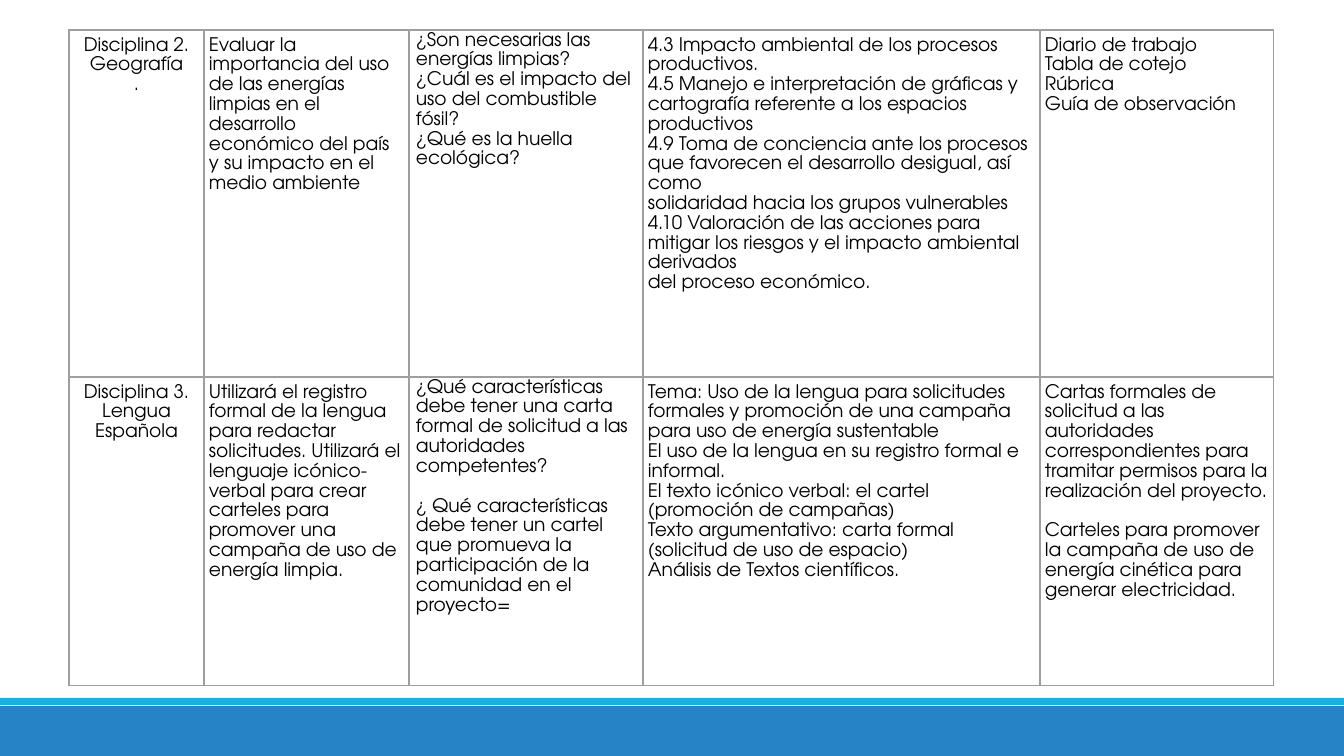
from lxml import etree
from pptx import Presentation
from pptx import util as u
from pptx.dml.color import RGBColor
from pptx.enum import shapes, text
from pptx.oxml.ns import qn

PX = 914400 / 134.4
THEME = {
    "font": "TeX Gyre Adventor", "size": 10, "leading": 1.15,
    "ink": "000000", "paper": "FFFFFF", "rule": "9E9E9E", "width": 0.75,
    "band": "2683C6", "strip": "1CADE4",
}


def px(n):
    return u.Emu(round(n * PX))


def edge(cell):
    """Draw the four borders of a cell."""
    props = cell._tc.get_or_add_tcPr()
    for side in ("lnL", "lnR", "lnT", "lnB"):
        line = etree.SubElement(props, qn("a:" + side), w=str(u.Pt(THEME["width"])))
        fill = etree.SubElement(line, qn("a:solidFill"))
        etree.SubElement(fill, qn("a:srgbClr"), val=THEME["rule"])


# One line is one paragraph; an empty line asks for a gap above the next one.
ROWS = [
    [
        "Disciplina 2.\nGeografía\n.",
        "Evaluar la importancia del uso de las energías limpias en el desarrollo "
        "económico del país y su impacto en el medio ambiente",
        "¿Son necesarias las energías limpias?\n"
        "¿Cuál es el impacto del uso del combustible fósil?\n"
        "¿Qué es la huella ecológica?",
        "4.3 Impacto ambiental de los procesos productivos.\n"
        "4.5 Manejo e interpretación de gráficas y cartografía referente a los "
        "espacios productivos\n"
        "4.9 Toma de conciencia ante los procesos que favorecen el desarrollo "
        "desigual, así como\n"
        "solidaridad hacia los grupos vulnerables\n"
        "4.10 Valoración de las acciones para mitigar los riesgos y el impacto "
        "ambiental derivados\n"
        "del proceso económico.",
        "Diario de trabajo\nTabla de cotejo\nRúbrica\nGuía de observación",
    ],
    [
        "Disciplina 3.\nLengua Española",
        "Utilizará el registro formal de la lengua para redactar solicitudes. "
        "Utilizará el lenguaje icónico-verbal para crear carteles para promover "
        "una campaña de uso de energía limpia.",
        "¿Qué características debe tener una carta formal de solicitud a las "
        "autoridades competentes?\n\n"
        "¿ Qué características debe tener un cartel que promueva la participación "
        "de la comunidad en el proyecto=",
        "Tema: Uso de la lengua para solicitudes formales y promoción de una "
        "campaña para uso de energía sustentable\n"
        "El uso de la lengua en su registro formal e informal.\n"
        "El texto icónico verbal: el cartel (promoción de campañas)\n"
        "Texto argumentativo: carta formal (solicitud de uso de espacio)\n"
        "Análisis de Textos científicos.",
        "Cartas formales de solicitud a las autoridades correspondientes para "
        "tramitar permisos para la realización del proyecto.\n\n"
        "Carteles para promover la campaña de uso de energía cinética para "
        "generar electricidad.",
    ],
]
WIDTHS = [135, 205, 234, 397, 234]
HEIGHTS = [347, 309]
GAP = 20

deck = Presentation()
deck.slide_width, deck.slide_height = px(1344), px(756)
slide = deck.slides.add_slide(deck.slide_layouts[6])

for top, high, hue in ((706, 50, "band"), (698, 7, "strip")):
    bar = slide.shapes.add_shape(
        shapes.MSO_SHAPE.RECTANGLE, 0, px(top), px(1344), px(high))
    bar.shadow.inherit = False
    bar.fill.solid()
    bar.fill.fore_color.rgb = RGBColor.from_string(THEME[hue])
    bar.line.fill.background()

frame = slide.shapes.add_table(
    len(HEIGHTS), len(WIDTHS), px(69), px(30), px(sum(WIDTHS)), px(sum(HEIGHTS)))
table = frame.table
table.first_row = table.horz_banding = False
for col, wide in zip(table.columns, WIDTHS):
    col.width = px(wide)
for row, high in zip(table.rows, HEIGHTS):
    row.height = px(high)

for r, row in enumerate(ROWS):
    for c, words in enumerate(row):
        cell = table.cell(r, c)
        edge(cell)
        cell.fill.solid()
        cell.fill.fore_color.rgb = RGBColor.from_string(THEME["paper"])
        asks = c == 2  # the questions sit flush with the top rule
        cell.margin_left = cell.margin_right = px(7 if asks else 5)
        cell.margin_top = cell.margin_bottom = px(0 if asks else 5)

        blocks = [block.split("\n") for block in words.split("\n\n")]
        cell.text_frame.text = "\n".join(sum(blocks, []))
        paras = iter(cell.text_frame.paragraphs)
        for b, block in enumerate(blocks):
            for n, para in zip(range(len(block)), paras):
                para.alignment = text.PP_ALIGN.CENTER if c == 0 else text.PP_ALIGN.LEFT
                para.line_spacing = THEME["leading"]
                if b and n == 0:
                    para.space_before = px(GAP)
                for run in para.runs:
                    run.font.name = THEME["font"]
                    run.font.size = u.Pt(THEME["size"])
                    run.font.color.rgb = RGBColor.from_string(THEME["ink"])

deck.save("out.pptx")
